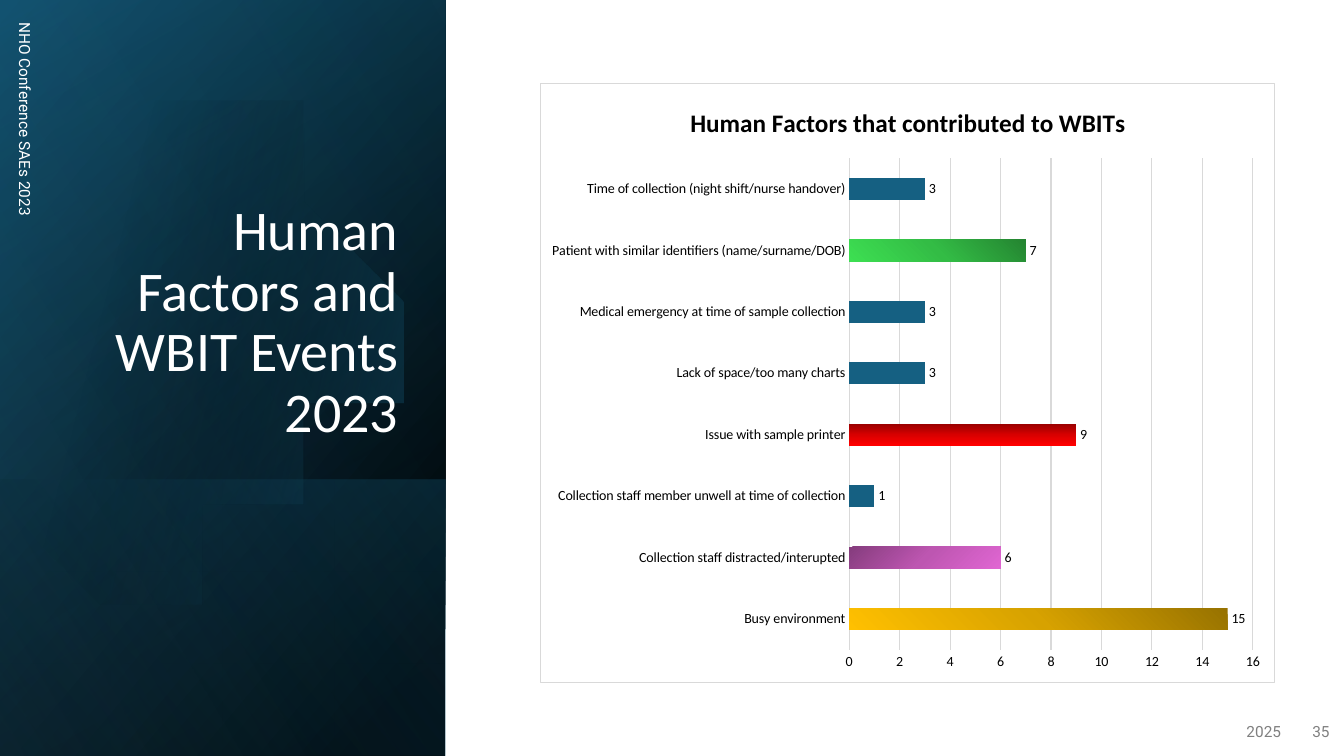
from dataclasses import dataclass

import lxml.etree
import pptx
import pptx.chart.data
import pptx.dml.color
import pptx.enum.chart
import pptx.enum.shapes
import pptx.enum.text
import pptx.oxml
import pptx.oxml.ns
import pptx.util

COLORS = {"white": "FFFFFF", "black": "000000", "gray": "808080", "rule": "D9D9D9",
          "blue": "156082", "navy": "104862", "sky": "46B1E1"}
HEADING = "Human Factors that contributed to WBITs"
ALIGN = pptx.enum.text.PP_ALIGN
qn = pptx.oxml.ns.qn


@dataclass
class Gradient:
    stops: list[tuple[float, str, float]]  # position, colour, opacity in percent
    angle: float


@dataclass
class Panel:
    top: float
    height: float
    gradient: Gradient


@dataclass
class Note:
    text: str
    box: tuple[float, float, float, float]
    color: str
    align: ALIGN
    rotation: float = 0


@dataclass
class Factor:
    name: str
    count: int
    gradient: Gradient | None = None


def shades(angle: float, *hexes: str) -> Gradient:
    return Gradient([(i * 50, h, 100) for i, h in enumerate(hexes)], angle)


PANEL_WIDTH = 33.15
PANELS = [
    Panel(0, 100, Gradient([(8, COLORS["black"], 100), (100, COLORS["navy"], 100)], 50)),
    Panel(0, 100, Gradient([(0, COLORS["black"], 0), (99, COLORS["blue"], 46)], 30)),
    Panel(63.47, 36.53, Gradient([(2, COLORS["blue"], 29), (100, COLORS["black"], 30)], 130)),
]
SHEEN = Panel(0, 100, Gradient([(0, COLORS["black"], 0), (99, COLORS["sky"], 11)], 120))
DISC_GLOW = Gradient([(29, COLORS["black"], 0), (100, COLORS["blue"], 43)], 14)

# Curves of the disc in inches: two controls and an end each
DISC_START = (1.49, 1.1)
DISC_CURVES = [
    ((2.46, 1.12), (3.35, 1.77), (3.63, 2.75)),
    ((3.98, 3.97), (3.28, 5.23), (2.07, 5.58)),
    ((1.31, 5.8), (0.53, 5.61), (0, 5.16)),
    ((0, 4), (0, 2.8), (0, 1.61)),
    ((0.23, 1.42), (0.5, 1.28), (0.8, 1.19)),
    ((1.03, 1.13), (1.26, 1.1), DISC_START),
]

NOTES = [
    Note("NHO Conference SAEs 2023", (-15, 28.93, 33.75, 5.33), "white", ALIGN.LEFT, 90),
    Note("2025", (73.57, 94.13, 22.5, 5.33), "gray", ALIGN.RIGHT),
    Note("35", (96, 94.13, 3.67, 5.33), "gray", ALIGN.RIGHT),
]
FACTORS = [
    Factor("Busy environment", 15, shades(135, "977200", "D7A200", "FFC000")),
    Factor("Collection staff distracted/interupted", 6, shades(45, "853C7D", "BD56B1", "E066D2")),
    Factor("Collection staff member unwell at time of collection", 1),
    Factor("Issue with sample printer", 9, shades(90, "970000", "D70000", "FF0000")),
    Factor("Lack of space/too many charts", 3),
    Factor("Medical emergency at time of sample collection", 3),
    Factor("Patient with similar identifiers (name/surname/DOB)", 7,
           shades(135, "248431", "33BC45", "3DDF52")),
    Factor("Time of collection (night shift/nurse handover)", 3),
]

deck = pptx.Presentation()
deck.slide_width = pptx.util.Inches(13.33)
deck.slide_height = pptx.util.Inches(7.5)
slide = deck.slides.add_slide(deck.slide_layouts[5])


def across(percent: float) -> int:
    return round(deck.slide_width * percent / 100)


def down(percent: float) -> int:
    return round(deck.slide_height * percent / 100)


def place(left: float, top: float, width: float, height: float) -> tuple[int, int, int, int]:
    return across(left), down(top), across(width), down(height)


def rgb(name: str) -> pptx.dml.color.RGBColor:
    return pptx.dml.color.RGBColor.from_string(COLORS[name])


def apply_gradient(properties, gradient: Gradient) -> None:
    """Swap the solid fill of a shape-properties element for a gradient."""
    stops = "".join(
        f'<a:gs pos="{position * 1000}"><a:srgbClr val="{color}">'
        f'<a:alpha val="{opacity * 1000}"/></a:srgbClr></a:gs>'
        for position, color, opacity in gradient.stops)
    fill = pptx.oxml.parse_xml(
        f'<a:gradFill {pptx.oxml.ns.nsdecls("a")} rotWithShape="1"><a:gsLst>{stops}</a:gsLst>'
        f'<a:lin ang="{gradient.angle * 60000}" scaled="0"/></a:gradFill>')
    solid = properties.find(qn("a:solidFill"))
    properties.replace(solid, fill)


def paint(shape, gradient: Gradient) -> None:
    shape.shadow.inherit = False
    shape.line.fill.background()
    shape.fill.solid()
    apply_gradient(shape.element.spPr, gradient)


def draw_panel(panel: Panel) -> None:
    """Draw a mirrored rectangle turned by a quarter within its visible frame."""
    wide, tall = across(PANEL_WIDTH), down(panel.height)
    left, top = (wide - tall) // 2, down(panel.top) + (tall - wide) // 2
    band = slide.shapes.add_shape(
        pptx.enum.shapes.MSO_SHAPE.RECTANGLE, left, top, tall, wide)
    band.rotation = 90
    band.element.spPr.find(qn("a:xfrm")).set("flipH", "1")
    paint(band, panel.gradient)


def draw_disc(steps: int = 16) -> None:
    points, start = [], DISC_START
    for first, second, end in DISC_CURVES:
        for step in range(1, steps + 1):
            t = step / steps
            points.append(tuple(
                (1 - t) ** 3 * a + 3 * (1 - t) ** 2 * t * b + 3 * (1 - t) * t ** 2 * c + t ** 3 * d
                for a, b, c, d in zip(start, first, second, end)))
        start = end
    outline = slide.shapes.build_freeform(*DISC_START, scale=pptx.util.Inches(1))
    outline.add_line_segments(points)
    paint(outline.convert_to_shape(), DISC_GLOW)


def draw_note(note: Note) -> None:
    box = slide.shapes.add_textbox(*place(*note.box))
    box.rotation = note.rotation
    frame = box.text_frame
    frame.word_wrap = True
    frame.vertical_anchor = pptx.enum.text.MSO_ANCHOR.MIDDLE
    line = frame.paragraphs[0]
    line.text, line.alignment = note.text, note.align
    line.space_after = pptx.util.Pt(6)
    line.font.name, line.font.size = "Roboto", pptx.util.Pt(11)
    line.font.color.rgb = rgb(note.color)


def draw_title() -> None:
    title = slide.shapes.title
    title.left, title.top, title.width, title.height = place(4.8, 24.53, 25.58, 34.93)
    slide.shapes.element.append(title.element)  # in front of the panels
    frame = title.text_frame
    frame.word_wrap = True
    frame.auto_size = pptx.enum.text.MSO_AUTO_SIZE.NONE
    frame.vertical_anchor = pptx.enum.text.MSO_ANCHOR.BOTTOM
    line = frame.paragraphs[0]
    line.text, line.alignment = "Human Factors and WBIT Events 2023", ALIGN.RIGHT
    line.line_spacing = 0.9
    line.font.name, line.font.size = "Calibri", pptx.util.Pt(40)
    line.font.color.rgb = rgb("white")


def draw_chart() -> None:
    data = pptx.chart.data.CategoryChartData()
    data.categories = [factor.name for factor in FACTORS]
    data.add_series(HEADING, [factor.count for factor in FACTORS])
    chart = slide.shapes.add_chart(
        pptx.enum.chart.XL_CHART_TYPE.BAR_CLUSTERED, *place(40.21, 10.93, 54.69, 79.47), data).chart
    chart.has_legend = False
    chart.font.name, chart.font.size = "Calibri", pptx.util.Pt(10)
    chart.font.color.rgb = rgb("black")
    chart.has_title = True
    heading = chart.chart_title.text_frame.paragraphs[0]
    heading.text = HEADING
    heading.font.name, heading.font.size, heading.font.bold = "Calibri", pptx.util.Pt(18), True
    heading.font.color.rgb = rgb("black")

    # Axes
    names, counts = chart.category_axis, chart.value_axis
    for axis in (names, counts):
        axis.major_tick_mark = axis.minor_tick_mark = pptx.enum.chart.XL_TICK_MARK.NONE
    counts.minimum_scale, counts.maximum_scale, counts.major_unit = 0, 16, 2
    counts.format.line.fill.background()
    for rule in (names.format.line, counts.major_gridlines.format.line):
        rule.color.rgb, rule.width = rgb("rule"), pptx.util.Pt(0.75)

    # Bars and labels
    plot = chart.plots[0]
    plot.gap_width, plot.vary_by_categories = 182, False
    plot.has_data_labels = True
    plot.data_labels.show_value = True
    plot.data_labels.position = pptx.enum.chart.XL_LABEL_POSITION.OUTSIDE_END
    bars = plot.series[0]
    bars.invert_if_negative = False
    bars.format.fill.solid()
    bars.format.fill.fore_color.rgb = rgb("blue")
    for index, factor in enumerate(FACTORS):
        if factor.gradient:
            bars.points[index].format.fill.solid()
            properties = chart.element.xpath(f'.//c:dPt[c:idx/@val="{index}"]/c:spPr')[0]
            apply_gradient(properties, factor.gradient)

    # Frame and plot area
    chart.element.find(qn("c:chart")).addnext(pptx.oxml.parse_xml(
        f'<c:spPr {pptx.oxml.ns.nsdecls("c", "a")}><a:solidFill><a:srgbClr val="{COLORS["white"]}"/>'
        f'</a:solidFill><a:ln w="9525"><a:solidFill><a:srgbClr val="{COLORS["rule"]}"/>'
        '</a:solidFill></a:ln></c:spPr>'))
    area = chart.element.xpath(".//c:plotArea")[0]
    for layout in area.findall(qn("c:layout")):
        area.remove(layout)
    layout = lxml.etree.Element(qn("c:layout"))
    manual = lxml.etree.SubElement(layout, qn("c:manualLayout"))
    for tag, value in (("layoutTarget", "inner"), ("xMode", "edge"), ("yMode", "edge"),
                       ("x", "0.42"), ("y", "0.125"), ("w", "0.55"), ("h", "0.82")):
        lxml.etree.SubElement(manual, qn(f"c:{tag}")).set("val", value)
    area.insert(0, layout)


def main() -> None:
    for panel in PANELS:
        draw_panel(panel)
    draw_disc()
    draw_panel(SHEEN)
    draw_title()
    for note in NOTES:
        draw_note(note)
    draw_chart()
    deck.save("out.pptx")


if __name__ == "__main__":
    main()
